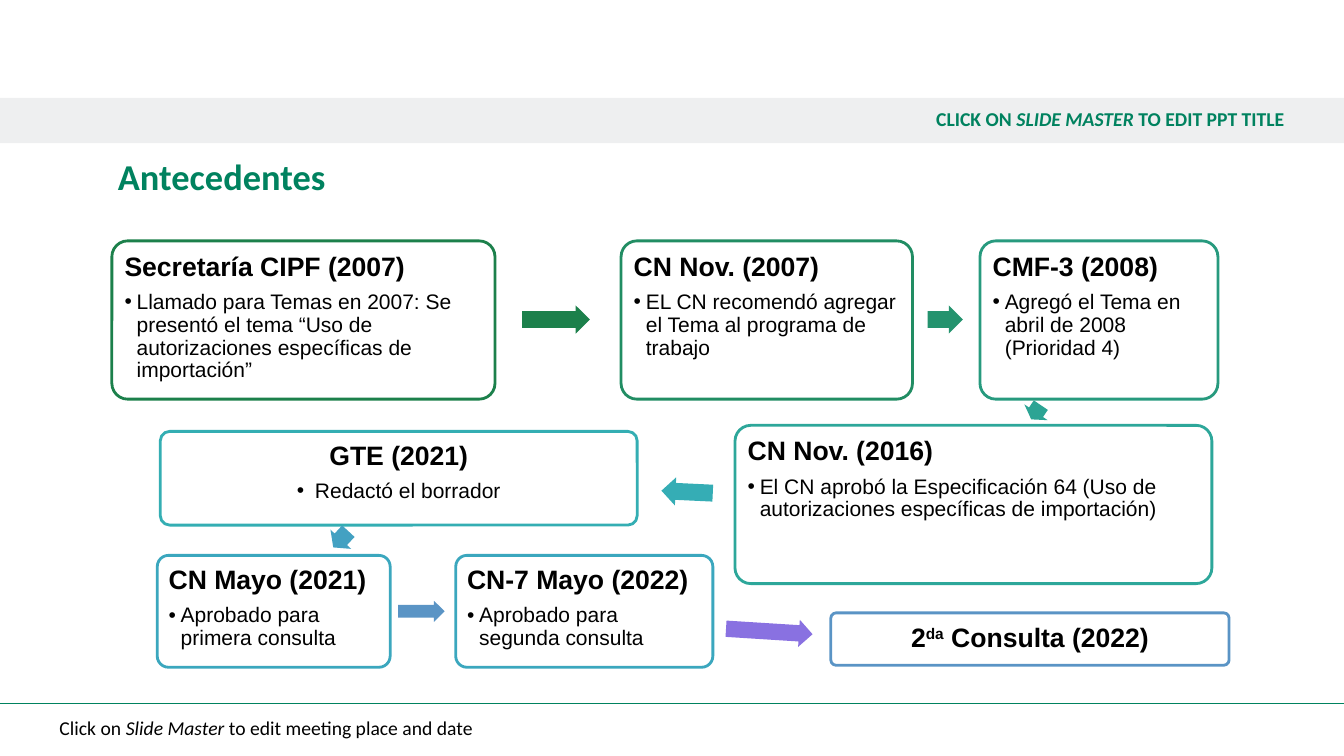
from lxml.etree import SubElement
from pptx import Presentation
from pptx.dml.color import RGBColor
from pptx.enum.shapes import MSO_CONNECTOR as Connector, MSO_SHAPE as Shape
from pptx.enum.text import MSO_ANCHOR as Anchor, PP_ALIGN as Align
from pptx.oxml.ns import qn
from pptx.util import Pt

EMU_PER_PX = 9144

BLACK = RGBColor(0x00, 0x00, 0x00)
BRAND = RGBColor(0x00, 0x82, 0x5F)
BAND = RGBColor(0xD8, 0xD9, 0xDC)
FOREST = RGBColor(0x1C, 0x80, 0x4B)
GREEN = RGBColor(0x21, 0x8D, 0x63)
JADE = RGBColor(0x24, 0x93, 0x6E)
SEA = RGBColor(0x27, 0x9A, 0x7E)
MINT = RGBColor(0x2C, 0xA4, 0x94)
TEAL = RGBColor(0x2D, 0xA7, 0x9A)
AQUA = RGBColor(0x35, 0xAD, 0xB5)
CYAN = RGBColor(0x34, 0xAE, 0xB3)
SKY = RGBColor(0x43, 0xA1, 0xC2)
LAKE = RGBColor(0x3B, 0xA7, 0xBE)
BLUE = RGBColor(0x5A, 0x94, 0xC5)
VIOLET = RGBColor(0x89, 0x71, 0xE1)


def px(length):
    return length * EMU_PER_PX


class TimelineSlide:
    frame_font = "Calibri"
    card_font = "Arial"
    heading_size = 19
    detail_size = 15
    line_spacing = 0.9

    def __init__(self, deck):
        self.slide = deck.slides.add_slide(deck.slide_layouts[6])

    def shape(self, kind, box, fill=None, line=None):
        shape = self.slide.shapes.add_shape(kind, *map(px, box))
        shape.shadow.inherit = False
        if fill is None:
            shape.fill.background()
        else:
            shape.fill.solid()
            shape.fill.fore_color.rgb = fill
        if line is None:
            shape.line.fill.background()
        else:
            shape.line.color.rgb = line
            shape.line.width = Pt(2)
        return shape

    def frame(self, shape, anchor, insets):
        frame = shape.text_frame
        frame.word_wrap = True
        frame.vertical_anchor = anchor
        (frame.margin_left, frame.margin_top,
         frame.margin_right, frame.margin_bottom) = map(px, insets)
        return frame

    def add_text(self, paragraph, pieces, font, size, color, bold, align=Align.LEFT):
        paragraph.alignment = align
        paragraph.line_spacing = self.line_spacing
        for piece in pieces:
            run = paragraph.add_run()
            run.text = piece
            run.font.name = font
            run.font.size = Pt(size)
            run.font.color.rgb = color
            run.font.bold = bold
        return paragraph.runs

    def rule(self, y, color):
        rule = self.slide.shapes.add_connector(
            Connector.STRAIGHT, 0, px(y), px(1333), px(y))
        rule.line.color.rgb = color
        rule.line.width = Pt(1)
        SubElement(rule._element.spPr, qn("a:effectLst"))

    def band(self, box, color, opacity):
        band = self.shape(Shape.RECTANGLE, box, color)
        tint = band._element.spPr.find(qn("a:solidFill"))[0]
        SubElement(tint, qn("a:alpha"), val=str(opacity * 1000))
        return band

    def text_box(self, box):
        return self.slide.shapes.add_textbox(*map(px, box))

    def master_text(self, holder, pieces, color, bold, align):
        frame = self.frame(holder, Anchor.MIDDLE, (59, 5, 59, 5))
        runs = self.add_text(frame.paragraphs[0], pieces, self.frame_font, 14,
                             color, bold, align)
        runs[1].font.italic = True

    def title(self, box, text):
        frame = self.frame(self.text_box(box), Anchor.TOP, (59, 0, 39, 5))
        self.add_text(frame.paragraphs[0], [text], self.frame_font, 26, BRAND, True)

    def card(self, box, color, heading, detail=None, align=Align.LEFT, hanging=12):
        card = self.shape(Shape.ROUNDED_RECTANGLE, box, line=color)
        card.adjustments[0] = 0.1
        anchor = Anchor.TOP if detail else Anchor.MIDDLE
        frame = self.frame(card, anchor, (8, 8, 8, 8))
        head = frame.paragraphs[0]
        runs = self.add_text(head, heading, self.card_font, self.heading_size,
                             BLACK, True, align)
        if detail:
            head.space_after = Pt(6.65)
            self.bullet(frame.add_paragraph(), detail, align, hanging)
        return runs

    def bullet(self, paragraph, text, align, hanging):
        properties = paragraph._p.get_or_add_pPr()
        properties.set("marL", str(px(hanging)))
        properties.set("indent", str(-px(hanging)))
        SubElement(properties, qn("a:buFont"), typeface=self.card_font)
        SubElement(properties, qn("a:buChar"), char="•")
        self.add_text(paragraph, [text], self.card_font, self.detail_size,
                      BLACK, False, align)

    def arrow(self, box, color, rotation=0):
        arrow = self.shape(Shape.RIGHT_ARROW, box, color)
        arrow.adjustments[0] = 0.6
        arrow.adjustments[1] = 0.5
        arrow.rotation = rotation


def main():
    deck = Presentation()
    deck.slide_width = px(1333)
    deck.slide_height = px(750)
    page = TimelineSlide(deck)

    page.rule(698, BRAND)
    page.master_text(
        page.text_box((0, 706, 1333, 35)),
        ["Click on ", "Slide Master ", "to edit meeting place and date"],
        BLACK, False, Align.LEFT)
    page.master_text(
        page.band((0, 97, 1333, 45), BAND, 42),
        ["CLICK ON ", "SLIDE MASTER ", "TO EDIT PPT TITLE"],
        BRAND, True, Align.RIGHT)
    page.title((58, 158, 400, 42), "Antecedentes")

    milestones = [
        ((111, 239, 380, 157), FOREST, "Secretaría CIPF (2007)",
         "Llamado para Temas en 2007: Se presentó el tema “Uso de "
         "autorizaciones específicas de importación”"),
        ((616, 239, 289, 157), GREEN, "CN Nov. (2007)",
         "EL CN recomendó agregar el Tema al programa de trabajo"),
        ((972, 239, 236, 157), SEA, "CMF-3 (2008)",
         "Agregó el Tema en abril de 2008 (Prioridad 4)"),
        ((729, 422, 473, 157), TEAL, "CN Nov. (2016)",
         "El CN aprobó la Especificación 64 (Uso de autorizaciones "
         "específicas de importación)"),
        ((156, 551, 231, 111), LAKE, "CN Mayo (2021)",
         "Aprobado para primera consulta"),
        ((452, 551, 255, 111), LAKE, "CN-7 Mayo (2022)",
         "Aprobado para segunda consulta"),
    ]
    for box, color, heading, detail in milestones:
        page.card(box, color, [heading], detail)
    page.card((159, 428, 473, 93), CYAN, ["GTE (2021)"],
              "Redactó el borrador", Align.CENTER, hanging=18)
    second_consultation = page.card(
        (824, 608, 395, 52), BLUE, ["2", "da", " Consulta (2022)"],
        align=Align.CENTER)
    second_consultation[1]._r.get_or_add_rPr().set("baseline", "30000")

    steps = [
        ((518, 303, 67, 28), FOREST, 0),
        ((920, 303, 35, 28), JADE, 0),
        ((1019, 395, 17, 28), MINT, 124.2),
        ((656, 474, 51, 28), AQUA, 182.7),
        ((327, 521, 22, 28), SKY, 132.9),
        ((395, 596, 46, 21), BLUE, 0),
        ((720, 613, 86, 27), VIOLET, 3.6),
    ]
    for box, color, rotation in steps:
        page.arrow(box, color, rotation)

    deck.save("out.pptx")


if __name__ == "__main__":
    main()
